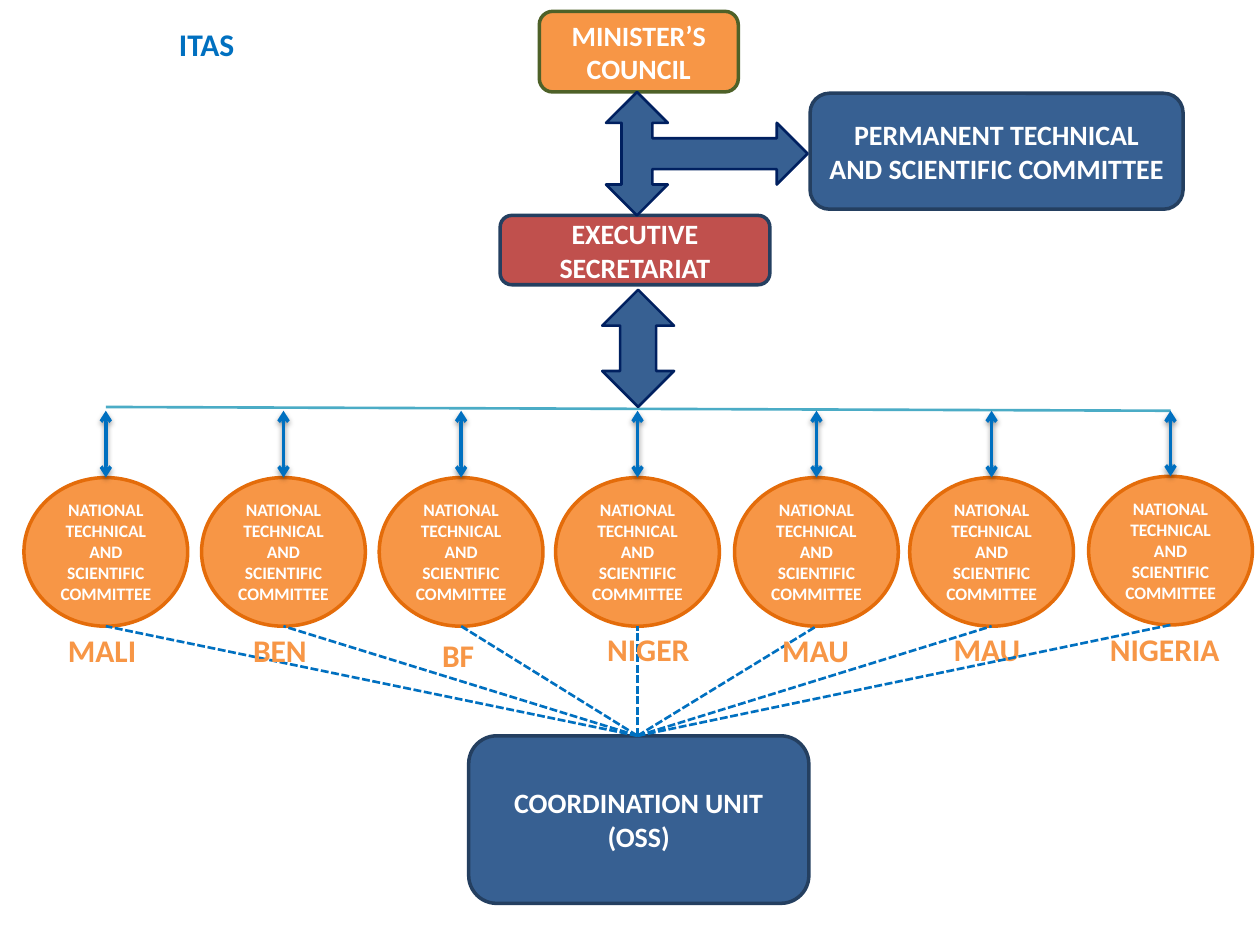
from lxml import etree
from pptx import Presentation
from pptx import util as u
from pptx.dml import color
from pptx.enum import dml, shapes, text
from pptx.oxml import ns

SCALE = 9144
FORMS = shapes.MSO_SHAPE
BLUE, NAVY, STEEL, ORANGE = "0070C0", "243F60", "376092", "F79646"
COMMITTEE = "NATIONAL TECHNICAL AND SCIENTIFIC COMMITTEE"
COUNTRIES = [
    ("MALI", 19, 379, 25, 117, 85),
    ("BEN", 160, 379, 31, 117, 85),
    ("BF", 301, 379, 40, 121, 85),
    ("NIGER", 441, 379, 31, 116, 107),
    ("MAU", 583, 379, 28, 117, 85),
    ("MAU", 722, 379, 25, 116, 85),
    ("NIGERIA", 864, 378, 7, 117, 113),
]


def px(*lengths):
    return [u.Emu(length * SCALE) for length in lengths]


def rgb(value):
    return color.RGBColor.from_string(value)


def write(frame, content, size=16, tint="FFFFFF", align=text.PP_ALIGN.CENTER,
          anchor=text.MSO_ANCHOR.MIDDLE):
    frame.word_wrap = True
    frame.vertical_anchor = anchor
    for index, line in enumerate(content.split("\n")):
        para = frame.add_paragraph() if index else frame.paragraphs[0]
        para.alignment = align
        span = para.add_run()
        span.text = line
        span.font.name = "Calibri"
        span.font.size = u.Pt(size)
        span.font.bold = True
        span.font.color.rgb = rgb(tint)


def add_form(page, form, box, fill, line, width=2, content="", **style):
    shape = page.shapes.add_shape(form, *px(*box))
    shape.shadow.inherit = False
    shape.fill.solid()
    shape.fill.fore_color.rgb = rgb(fill)
    shape.line.color.rgb = rgb(line)
    shape.line.width = u.Pt(width)
    if content:
        write(shape.text_frame, content, **style)
    return shape


def add_line(page, start, end, tint, width=1.5, dash=None):
    line = page.shapes.add_connector(shapes.MSO_CONNECTOR.STRAIGHT, *px(*start, *end))
    line.line.color.rgb = rgb(tint)
    line.line.width = u.Pt(width)
    if dash:
        line.line.dash_style = dash
    etree.SubElement(line._element.spPr, ns.qn("a:effectLst"))
    return line


def add_double_arrow(page, start, end):
    arrow = add_line(page, start, end, BLUE, width=2)
    properties = arrow._element.spPr
    outline = properties.find(ns.qn("a:ln"))
    for name in ("a:headEnd", "a:tailEnd"):
        etree.SubElement(outline, ns.qn(name), type="arrow")
    shadow = etree.SubElement(
        properties.find(ns.qn("a:effectLst")), ns.qn("a:outerShdw"),
        blurRad=str(u.Pt(3.1)), dist=str(u.Pt(1.6)), dir="5400000", rotWithShape="0")
    tint = etree.SubElement(shadow, ns.qn("a:srgbClr"), val="000000")
    etree.SubElement(tint, ns.qn("a:alpha"), val="38000")


def add_heading(page, box):
    title = page.shapes.title
    title.left, title.top, title.width, title.height = px(*box)
    write(title.text_frame, "ITAS", size=18, tint=BLUE, anchor=text.MSO_ANCHOR.TOP)


def add_governance(page, box):
    left, top, width, height = box
    for content, x, y, wide, high, fill, line in [
        ("EXECUTIVE SECRETARIAT", 0, 162, 214, 55, "C0504D", NAVY),
        ("PERMANENT TECHNICAL AND SCIENTIFIC COMMITTEE", 246, 65, 296, 92, STEEL, NAVY),
        ("MINISTER’S COUNCIL", 31, 0, 158, 64, ORANGE, "4E6128"),
    ]:
        add_form(page, FORMS.ROUNDED_RECTANGLE, (left + x, top + y, wide, high),
                 fill, line, content=content)
    add_form(page, FORMS.UP_DOWN_ARROW, (left + 81, top + height - 93, 57, 93),
             STEEL, "002060", 1.5)
    junction = add_form(page, FORMS.LEFT_RIGHT_UP_ARROW, (left + 115, top + 33, 98, 160),
                        STEEL, "002060", 1.5)
    junction.rotation = 90


def add_coordination(page, box):
    add_form(page, FORMS.ROUNDED_RECTANGLE, box, STEEL, NAVY,
             content="COORDINATION UNIT\n(OSS)")


def add_committee(page, box, rail, hub):
    left, top, width, height = box
    middle = left + width // 2
    add_form(page, FORMS.OVAL, box, ORANGE, "E46C0A", content=COMMITTEE, size=10)
    add_line(page, hub, (middle, top + height), BLUE, dash=dml.MSO_LINE.SQUARE_DOT)
    add_double_arrow(page, (middle, rail), (middle, top))


def add_country(page, box, name):
    label = page.shapes.add_textbox(*px(*box))
    write(label.text_frame, name, size=18, tint=ORANGE, align=text.PP_ALIGN.LEFT,
          anchor=text.MSO_ANCHOR.TOP)


def main():
    deck = Presentation()
    deck.slide_width, deck.slide_height = px(1000, 750)
    page = deck.slides.add_slide(deck.slide_layouts[5])
    add_heading(page, (-86, 15, 500, 40))
    add_coordination(page, (372, 584, 270, 133))
    add_line(page, (84, 323), (929, 326), "4BACC6")
    for name, left, top, shift, drop, width in COUNTRIES:
        add_committee(page, (left, top, 130, 118), rail=326, hub=(506, 584))
        add_country(page, (left + shift, top + drop, width, 40), name)
    add_governance(page, (397, 9, 542, 314))
    deck.save("out.pptx")


if __name__ == "__main__":
    main()
